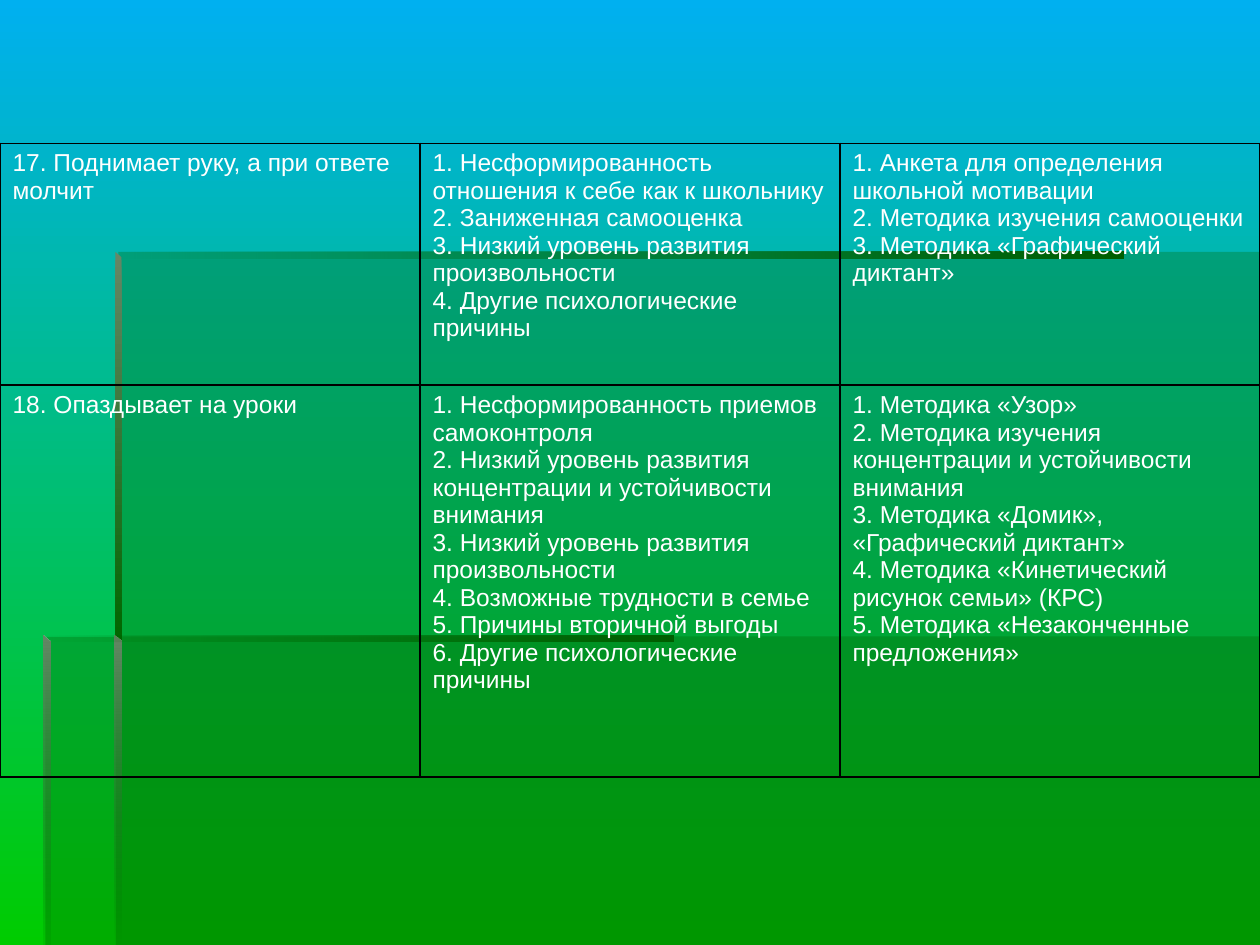
import pptx
import pptx.util
import pptx.dml.color
import pptx.oxml
import pptx.oxml.ns
from pptx.util import Pt


def rgb(value):
    return pptx.dml.color.RGBColor.from_string(value)


def set_gradient(fill, colors, angle):
    fill.gradient()
    fill.gradient_angle = angle
    for stop, color, position in zip(fill.gradient_stops, colors, (0, 1)):
        stop.color.rgb = rgb(color)
        stop.position = position


prs = pptx.Presentation()
prs.slide_width, prs.slide_height = Pt(720), Pt(540)
s = prs.slides.add_slide(prs.slide_layouts[6])
set_gradient(s.background.fill, ["00B0F0", "00CC00"], 270)

DOWN, RIGHT = 270, 0
panel = ["006600"]
ridge = ["006600", "005E00"]
edge = ["668666", "006600"]
shapes = [
    ([(66.24, 363.6), (66.24, 540), (720, 540), (720, 363.6)], panel, [30], None),
    ([(67.68, 364), (25.92, 364), (25.92, 540), (720, 540), (720, 144), (67.68, 144)],
     panel, [30], None),
    ([(66, 144), (66, 147.8), (641.8, 147.8), (641.8, 144)], ridge, [0, 100], RIGHT),
    ([(66, 144), (66, 367.2), (69.6, 367.2), (69.4, 147), ], edge, [100, 100], DOWN),
    ([(65.7, 540), (69.6, 540), (69.4, 366), (65.7, 363)], edge, [100, 0], DOWN),
    ([(25, 363), (25, 366.8), (385, 366.8), (385, 363)], ridge, [0, 100], RIGHT),
    ([(25, 363), (25, 540), (28.8, 540), (28.8, 366.5)], edge, [100, 10], DOWN),
]
for points, colors, alphas, angle in shapes:
    points = [(Pt(x), Pt(y)) for x, y in points]
    fb = s.shapes.build_freeform(*points[0])
    fb.add_line_segments(points[1:], close=True)
    sp = fb.convert_to_shape()
    sp.shadow.inherit = False
    sp.line.fill.background()
    if angle is None:
        sp.fill.solid()
        sp.fill.fore_color.rgb = rgb(colors[0])
    else:
        set_gradient(sp.fill, colors, angle)
    for clr, alpha in zip(sp._element.iter(pptx.oxml.ns.qn("a:srgbClr")), alphas):
        clr.append(pptx.oxml.parse_xml(
            f'<a:alpha {pptx.oxml.ns.nsdecls("a")} val="{alpha * 1000}"/>'))

rows = [
    [
        ["17. Поднимает руку, а при ответе молчит"],
        ["1. Несформированность отношения к себе как к школьнику",
         "2. Заниженная самооценка",
         "3. Низкий уровень развития произвольности",
         "4. Другие психологические причины"],
        ["1. Анкета для определения школьной мотивации",
         "2. Методика изучения самооценки",
         "3. Методика «Графический диктант»"],
    ],
    [
        ["18. Опаздывает на уроки"],
        ["1. Несформированность приемов самоконтроля",
         "2. Низкий уровень развития концентрации и устойчивости внимания",
         "3. Низкий уровень развития произвольности",
         "4. Возможные трудности в семье",
         "5. Причины вторичной выгоды",
         "6. Другие психологические причины"],
        ["1. Методика «Узор»",
         "2. Методика изучения концентрации и устойчивости внимания",
         "3. Методика «Домик», «Графический диктант»",
         "4. Методика «Кинетический рисунок семьи» (КРС)",
         "5. Методика «Незаконченные предложения»"],
    ],
]
heights = [138.24, 224]
table = s.shapes.add_table(2, 3, 0, Pt(81.8), Pt(720), Pt(sum(heights))).table
table.first_row = False
table.horz_banding = False
for col in table.columns:
    col.width = Pt(240)
for i, (height, row) in enumerate(zip(heights, rows)):
    table.rows[i].height = Pt(height)
    for j, lines in enumerate(row):
        cell = table.cell(i, j)
        tcPr = cell._tc.get_or_add_tcPr()
        for side in "LRTB":
            tcPr.append(pptx.oxml.parse_xml(
                f'<a:ln{side} {pptx.oxml.ns.nsdecls("a")} w="{Pt(0.75)}">'
                f'<a:solidFill><a:srgbClr val="000000"/></a:solidFill></a:ln{side}>'))
        cell.fill.background()
        cell.text_frame.text = "\n".join(lines)
        for p in cell.text_frame.paragraphs:
            for r in p.runs:
                r.font.size = Pt(14)
                r.font.name = "Arial"
                r.font.color.rgb = rgb("FFFFFF")

prs.save("out.pptx")
